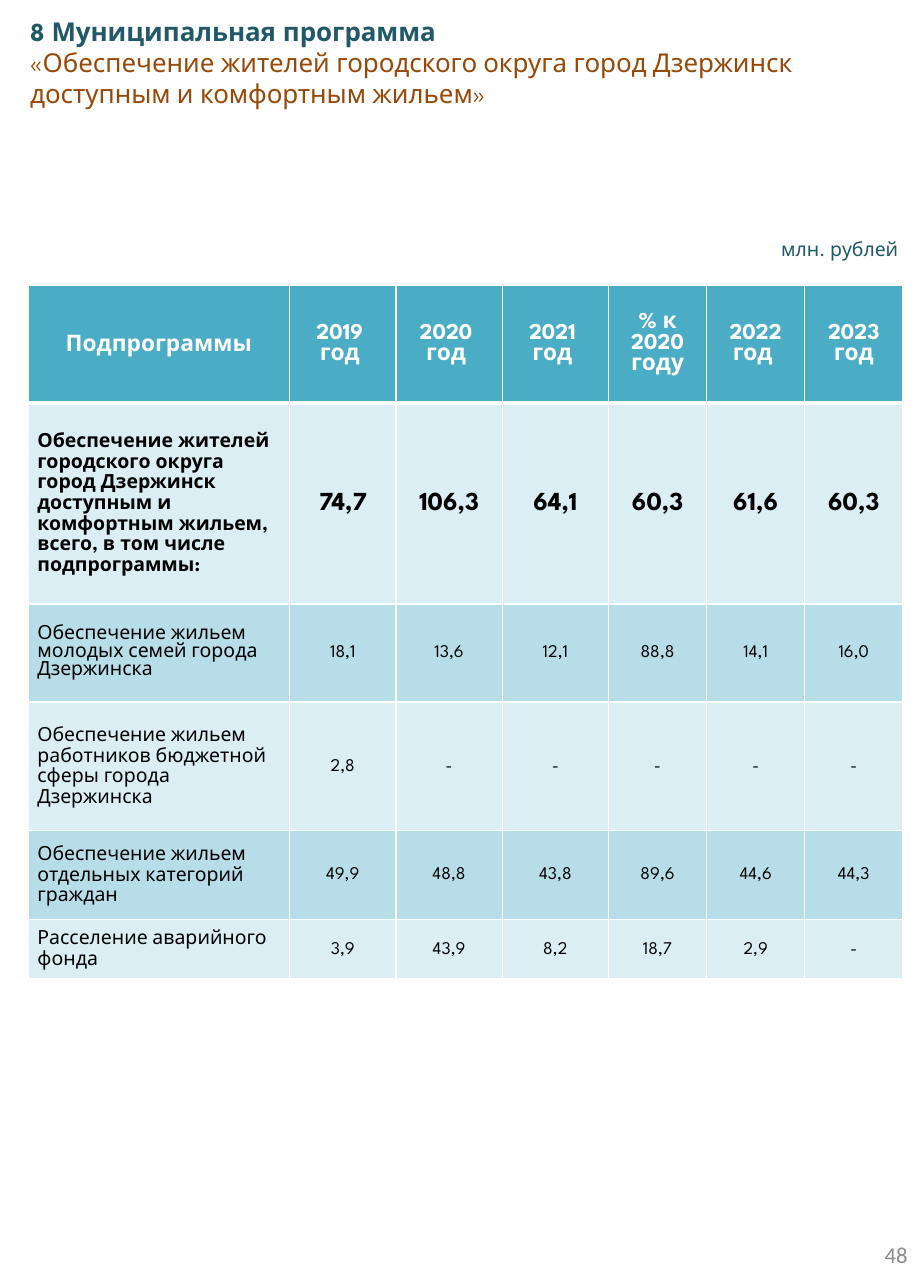
from lxml import etree
from pptx import Presentation
from pptx.dml.color import RGBColor
from pptx.enum import text
from pptx.oxml import ns
from pptx.util import Pt

PX = 9144  # 100 px to the inch
PAGE_SIZE = (7200900, 10080625)  # EMU
SPARTAN = "League Spartan"
TEAL, BROWN, GREY, WHITE, BLACK = "215968", "984807", "8C8C8C", "FFFFFF", "000000"
HEADER_FILL, LIGHT, DARK = "4BACC6", "DBEEF4", "B7DEE8"
LEFT, CENTER, RIGHT = (text.PP_ALIGN.LEFT, text.PP_ALIGN.CENTER, text.PP_ALIGN.RIGHT)

TITLE = "8 Муниципальная программа"
PROGRAMME = "«Обеспечение жителей городского округа город Дзержинск доступным и комфортным жильем»"
UNIT = "млн. рублей"
PAGE_NUMBER = "48"

TABLE_AT = (24, 244)
COLUMNS = [224, 91, 91, 91, 84, 84, 84]
HEADER = ["Подпрограммы", "2019 \nгод ", "2020 \nгод ", "2021 \nгод ",
          "% к 2020 году", "2022 год ", "2023 год"]
# label, values
BUDGET = [
    ("Обеспечение жителей городского округа город Дзержинск доступным и "
     "комфортным жильем, всего, в том числе подпрограммы:",
     ["74,7", "106,3", "64,1", "60,3", "61,6", "60,3"]),
    ("Обеспечение жильем молодых семей города Дзержинска",
     ["18,1", "13,6", "12,1", "88,8", "14,1", "16,0"]),
    ("Обеспечение жильем работников бюджетной сферы города Дзержинска",
     ["2,8", "-", "-", "-", "-", "-"]),
    ("Обеспечение жильем отдельных категорий граждан",
     ["49,9", "48,8", "43,8", "89,6", "44,6", "44,3"]),
    ("Расселение аварийного фонда",
     ["3,9", "43,9", "8,2", "18,7", "2,9", "-"]),
]
ROW_HEIGHTS = [101, 172, 84, 110, 76, 51]
LABEL_SPACING = [1.15, 1.15, 1, 1.15, 1.15, 1.15]
LABEL_MARGINS, VALUE_MARGINS = (8, 0, 8, 0), (1, 1, 1, 0)


def rgb(value):
    return RGBColor.from_string(value)


def style(para, size, color, bold=False, align=LEFT, spacing=None, font=SPARTAN):
    para.alignment = align
    para.line_spacing = spacing
    para.font.name, para.font.size, para.font.bold = font, Pt(size), bold
    para.font.color.rgb = rgb(color)


def set_margins(target, margins):
    """Set left, top, right and bottom margins of a cell or a text frame."""
    sides = ("margin_left", "margin_top", "margin_right", "margin_bottom")
    for side, length in zip(sides, margins):
        setattr(target, side, length * PX)


def add_text(page, place, lines, margins=(11, 6, 11, 6), anchor=text.MSO_ANCHOR.TOP):
    """Add a text box; lines holds pairs of wording and style options."""
    frame = page.shapes.add_textbox(*(length * PX for length in place)).text_frame
    frame.word_wrap = True
    frame.vertical_anchor = anchor
    set_margins(frame, margins)
    frame.text = "\n".join(wording for wording, _ in lines)
    for para, (_, options) in zip(frame.paragraphs, lines):
        style(para, **options)


def set_borders(cell, top, bottom):
    """Draw white borders; widths are in points."""
    widths = {"lnL": 1, "lnR": 1, "lnT": top, "lnB": bottom}
    properties = cell._tc.get_or_add_tcPr()
    for index, (side, width) in enumerate(widths.items()):
        line = etree.Element(ns.qn(f"a:{side}"), w=str(Pt(width)))
        solid = etree.SubElement(line, ns.qn("a:solidFill"))
        etree.SubElement(solid, ns.qn("a:srgbClr"), val=WHITE)
        properties.insert(index, line)


def cell_style(row, column):
    if row == 0:
        return dict(size=14, color=WHITE, bold=True, align=CENTER,
                    spacing=1.15 if column == 0 else None)
    total = row == 1
    if column == 0:
        return dict(size=12, color=BLACK, bold=total, spacing=LABEL_SPACING[row])
    return dict(size=16 if total else 11, color=BLACK, bold=total, align=CENTER)


def add_budget_table(page):
    rows = [HEADER] + [[label, *values] for label, values in BUDGET]
    size = (sum(COLUMNS), sum(ROW_HEIGHTS))
    place = [length * PX for length in TABLE_AT + size]
    table = page.shapes.add_table(len(rows), len(COLUMNS), *place).table
    table.first_row = table.horz_banding = False
    for column, width in zip(table.columns, COLUMNS):
        column.width = width * PX
    for r, wordings in enumerate(rows):
        table.rows[r].height = ROW_HEIGHTS[r] * PX
        fill = HEADER_FILL if r == 0 else (DARK, LIGHT)[r % 2]
        for c, wording in enumerate(wordings):
            cell = table.cell(r, c)
            cell.text = wording
            cell.vertical_anchor = text.MSO_ANCHOR.MIDDLE
            set_margins(cell, VALUE_MARGINS if r and c else LABEL_MARGINS)
            for para in cell.text_frame.paragraphs:
                style(para, **cell_style(r, c))
            cell.fill.solid()
            cell.fill.fore_color.rgb = rgb(fill)
            set_borders(cell, top=3 if r == 1 else 1, bottom=3 if r == 0 else 1)


def main():
    deck = Presentation()
    deck.slide_width, deck.slide_height = PAGE_SIZE
    page = deck.slides.add_slide(deck.slide_layouts[6])
    add_text(page, (641, 197, 139, 31), [(UNIT, dict(size=12, color=TEAL, align=RIGHT))])
    add_budget_table(page)
    add_text(page, (16, 8, 758, 91),
             [(TITLE, dict(size=16, color=TEAL, bold=True)),
              (PROGRAMME, dict(size=16, color=BROWN))], margins=(10, 5, 10, 5))
    add_text(page, (604, 1044, 184, 59),
             [(PAGE_NUMBER, dict(size=14, color=GREY, align=RIGHT, font="Calibri"))],
             anchor=text.MSO_ANCHOR.MIDDLE)
    deck.save("out.pptx")


if __name__ == "__main__":
    main()
